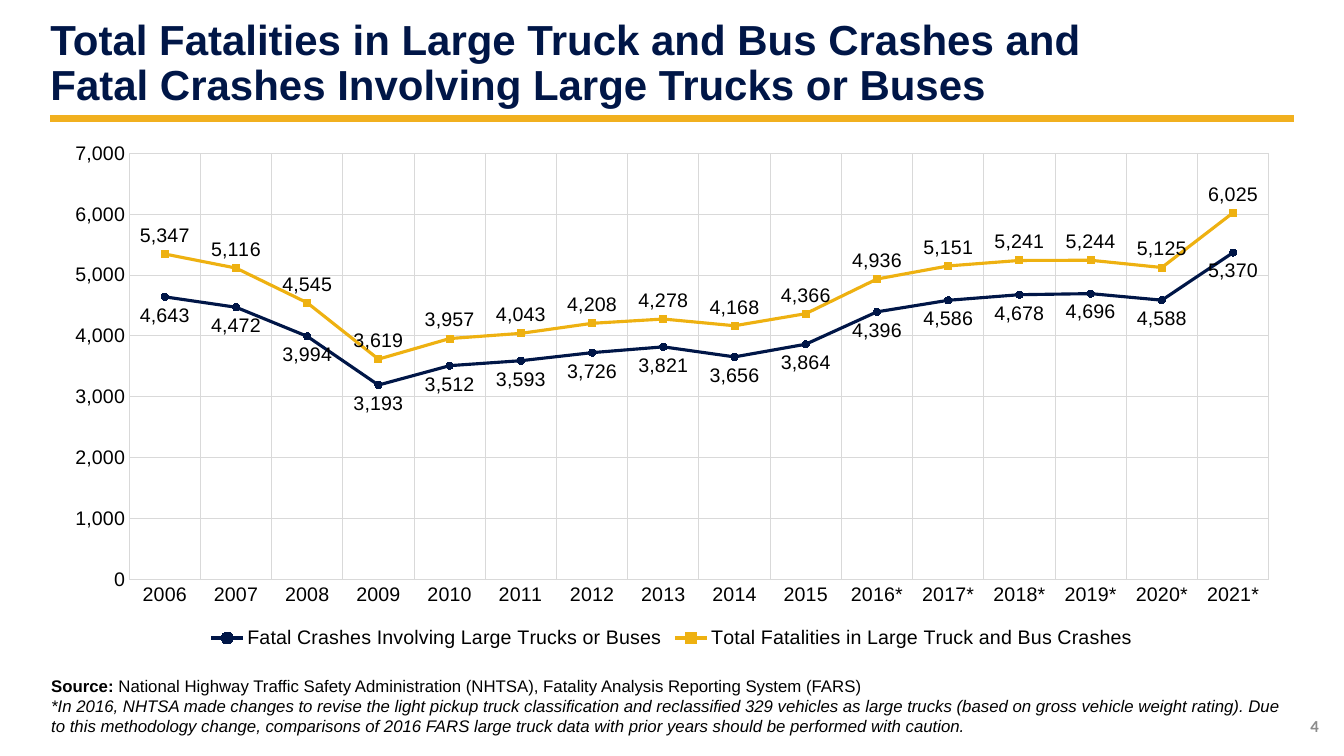
import pptx
import pptx.chart.data
import pptx.dml.color
import pptx.enum.chart
import pptx.enum.shapes
import pptx.enum.text
import pptx.oxml
import pptx.util
from pptx.util import Inches, Pt

NAVY, GOLD, RULE_GOLD = "001647", "EEB111", "F1B01F"
BLACK, GRID, GRAY = "000000", "D9D9D9", "8C8C8C"

Label = pptx.enum.chart.XL_LABEL_POSITION
Marker = pptx.enum.chart.XL_MARKER_STYLE
Anchor = pptx.enum.text.MSO_ANCHOR

TITLE = ("Total Fatalities in Large Truck and Bus Crashes and\v"
         "Fatal Crashes Involving Large Trucks or Buses")
YEARS = [str(year) + ("*" if year >= 2016 else "") for year in range(2006, 2022)]
SERIES = [
    ("Fatal Crashes Involving Large Trucks or Buses",
     (4643, 4472, 3994, 3193, 3512, 3593, 3726, 3821,
      3656, 3864, 4396, 4586, 4678, 4696, 4588, 5370),
     NAVY, Marker.CIRCLE, Label.BELOW),
    ("Total Fatalities in Large Truck and Bus Crashes",
     (5347, 5116, 4545, 3619, 3957, 4043, 4208, 4278,
      4168, 4366, 4936, 5151, 5241, 5244, 5125, 6025),
     GOLD, Marker.SQUARE, Label.ABOVE),
]
# Each footnote paragraph holds (text, bold, italic) spans
FOOTNOTE = [
    [("Source: ", True, False),
     ("National Highway Traffic Safety Administration (NHTSA), "
      "Fatality Analysis Reporting System (FARS)", False, False)],
    [("*In 2016, NHTSA made changes to revise the light pickup truck classification "
      "and reclassified 329 vehicles as large trucks (based on gross vehicle weight "
      "rating). Due to this methodology change, comparisons of 2016 FARS large truck "
      "data with prior years should be performed with caution.", False, True)],
]
NUMBER_FORMAT = "#,##0"


def color(value):
    return pptx.dml.color.RGBColor.from_string(value)


def set_font(font, size, value, name="Arial", bold=False):
    font.size, font.name, font.bold = Pt(size), name, bold
    font.color.rgb = color(value)


def set_line(line, value, width):
    line.color.rgb = color(value)
    line.width = Pt(width)


def add_text_box(page, left, top, width, height):
    box = page.shapes.add_textbox(Inches(left), Inches(top), Inches(width), Inches(height))
    box.text_frame.word_wrap = True
    return box.text_frame


def add_title(page):
    title = page.shapes.title
    title.left, title.top = Inches(0.5), Inches(0.14)
    title.width, title.height = Inches(12.33), Inches(1)
    frame = title.text_frame
    frame.text = TITLE
    frame.margin_left = 0
    frame.vertical_anchor = Anchor.BOTTOM
    para = frame.paragraphs[0]
    para.alignment = pptx.enum.text.PP_ALIGN.LEFT
    para.line_spacing = 0.9
    set_font(para.font, 30, NAVY, bold=True)


def add_rule(page):
    rule = page.shapes.add_connector(
        pptx.enum.shapes.MSO_CONNECTOR.STRAIGHT,
        Inches(0.5), Inches(1.18), Inches(12.83), Inches(1.18))
    set_line(rule.line, RULE_GOLD, 5)
    rule._element.spPr.append(pptx.oxml.parse_xml(
        '<a:effectLst xmlns:a="http://schemas.openxmlformats.org/drawingml/2006/main"/>'))


def add_crash_chart(page):
    data = pptx.chart.data.CategoryChartData(number_format=NUMBER_FORMAT)
    data.categories = YEARS
    for name, values, *_ in SERIES:
        data.add_series(name, values)
    chart = page.shapes.add_chart(
        pptx.enum.chart.XL_CHART_TYPE.LINE_MARKERS,
        Inches(0.5), Inches(1.31), Inches(12.33), Inches(5.17), data).chart
    set_font(chart.font, 14, BLACK)
    chart.has_title = False
    chart.has_legend = True
    chart.legend.position = pptx.enum.chart.XL_LEGEND_POSITION.BOTTOM
    chart.legend.include_in_layout = False
    set_font(chart.legend.font, 14, BLACK)

    for axis in (chart.category_axis, chart.value_axis):
        axis.has_major_gridlines = True
        set_line(axis.major_gridlines.format.line, GRID, 0.75)
        axis.major_tick_mark = pptx.enum.chart.XL_TICK_MARK.NONE
        axis.minor_tick_mark = pptx.enum.chart.XL_TICK_MARK.NONE
        set_font(axis.tick_labels.font, 14, BLACK)
    set_line(chart.category_axis.format.line, GRID, 0.75)
    scale = chart.value_axis
    scale.format.line.fill.background()
    scale.minimum_scale, scale.maximum_scale, scale.major_unit = 0, 7000, 1000
    scale.tick_labels.number_format = NUMBER_FORMAT
    scale.tick_labels.number_format_is_linked = False

    plot = chart.plots[0]
    plot.vary_by_categories = False
    for series, (_, _, shade, marker, position) in zip(plot.series, SERIES):
        series.smooth = False
        set_line(series.format.line, shade, 2.25)
        series.marker.style, series.marker.size = marker, 5
        series.marker.format.fill.solid()
        series.marker.format.fill.fore_color.rgb = color(shade)
        set_line(series.marker.format.line, shade, 0.75)
        labels = series.data_labels
        labels.show_value = True
        labels.position = position
        labels.number_format = NUMBER_FORMAT
        labels.number_format_is_linked = False
        set_font(labels.font, 14, BLACK)


def add_footnote(page):
    frame = add_text_box(page, 0.41, 6.65, 12.43, 0.71)
    for index, spans in enumerate(FOOTNOTE):
        para = frame.add_paragraph() if index else frame.paragraphs[0]
        set_font(para.font, 12, BLACK)
        for text, bold, italic in spans:
            span = para.add_run()
            span.text = text
            set_font(span.font, 12, BLACK, bold=bold)
            span.font.italic = italic


def add_page_number(page):
    frame = add_text_box(page, 12.58, 7, 0.6, 0.4)
    frame.vertical_anchor = Anchor.MIDDLE
    para = frame.paragraphs[0]
    para.text = "4"
    para.alignment = pptx.enum.text.PP_ALIGN.RIGHT
    set_font(para.font, 12, GRAY, name="Calibri", bold=True)


def main():
    deck = pptx.Presentation()
    deck.slide_width, deck.slide_height = Inches(13.33), Inches(7.5)
    page = deck.slides.add_slide(deck.slide_layouts.get_by_name("Title Only"))
    add_rule(page)
    add_title(page)
    add_page_number(page)
    add_crash_chart(page)
    add_footnote(page)
    deck.save("out.pptx")


if __name__ == "__main__":
    main()
